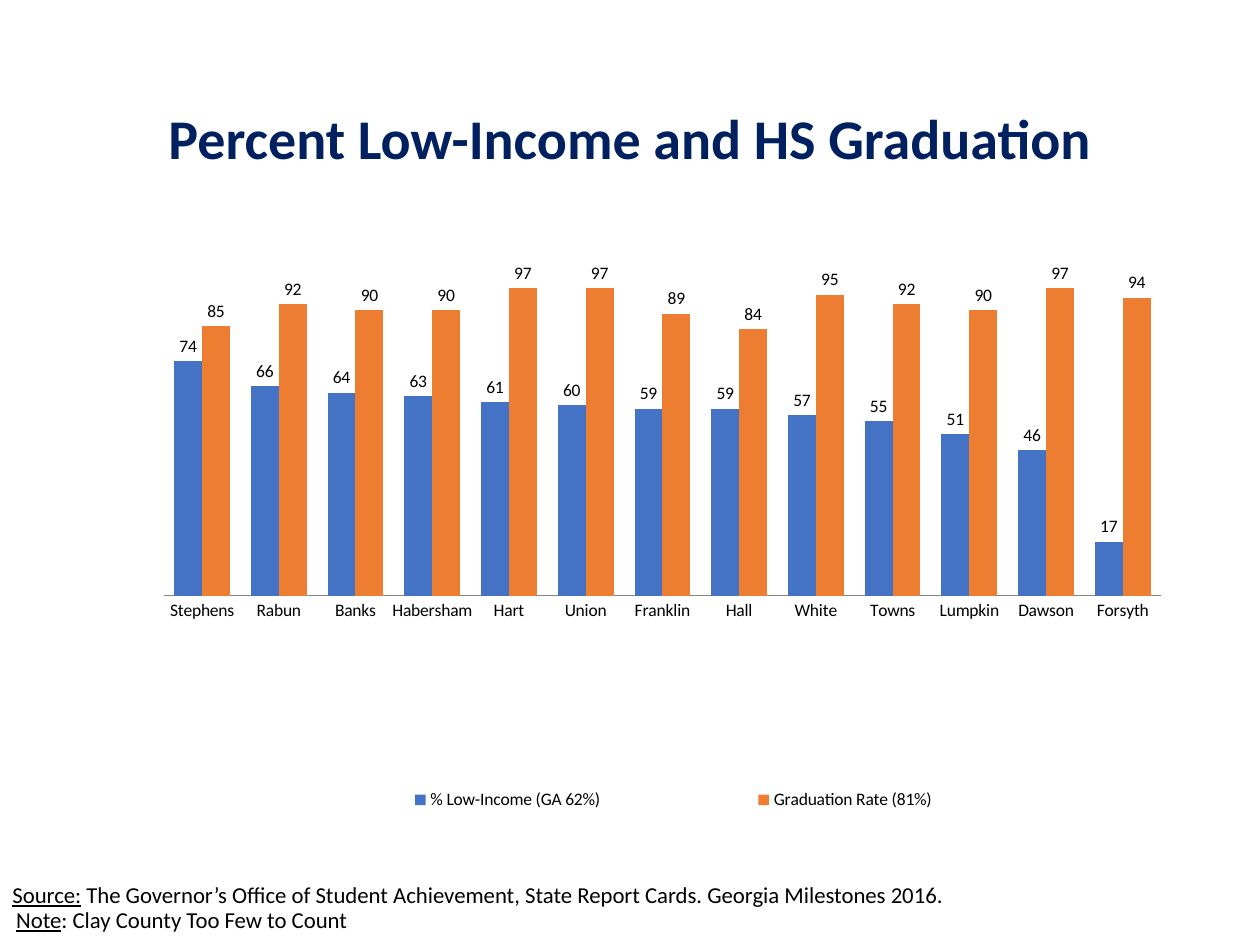
from lxml import etree
from pptx import Presentation
from pptx.chart.data import CategoryChartData
from pptx.dml.color import RGBColor
from pptx.enum.chart import XL_CHART_TYPE as ChartType
from pptx.enum.chart import XL_LABEL_POSITION as LabelPosition
from pptx.enum.chart import XL_LEGEND_POSITION as LegendPosition
from pptx.enum.chart import XL_TICK_MARK as TickMark
from pptx.enum.text import MSO_ANCHOR as Anchor
from pptx.enum.text import PP_ALIGN as Align
from pptx.oxml.ns import qn
from pptx.util import Inches, Pt

FONT = "Calibri"
COUNTIES = ["Stephens", "Rabun", "Banks", "Habersham", "Hart", "Union", "Franklin",
            "Hall", "White", "Towns", "Lumpkin", "Dawson", "Forsyth"]
SERIES = [
    ("% Low-Income (GA 62%)", "4472C4",
     [74, 66, 64, 63, 61, 60, 59, 59, 57, 55, 51, 46, 17]),
    ("Graduation Rate (81%)", "ED7D31",
     [85, 92, 90, 90, 97, 97, 89, 84, 95, 92, 90, 97, 94]),
]


def set_font(font, size, color, bold=False):
    font.name = FONT
    font.size = Pt(size)
    font.bold = bold
    font.color.rgb = RGBColor.from_string(color)


def set_title(slide, text):
    title = slide.shapes.title
    title.left, title.top = Inches(0.69), Inches(0.4)
    title.width, title.height = Inches(8.62), Inches(1.45)
    frame = title.text_frame
    frame.text = text
    frame.vertical_anchor = Anchor.MIDDLE
    paragraph = frame.paragraphs[0]
    paragraph.alignment = Align.CENTER
    paragraph.line_spacing = 0.9
    set_font(paragraph.font, 32, "002060", bold=True)


def add_footnote(slide, left, top, width, label, text):
    """Add one line of text that opens with an underlined label."""
    box = slide.shapes.add_textbox(Inches(left), Inches(top), Inches(width), Inches(0.23))
    box.text_frame.word_wrap = True
    paragraph = box.text_frame.paragraphs[0]
    paragraph.line_spacing = 0.6
    set_font(paragraph.font, 13, "000000")
    label_run = paragraph.add_run()
    label_run.text = label
    label_run.font.underline = True
    paragraph.add_run().text = text


def set_layout(element, before, x, y, w, h, inner=False):
    """Place a chart part by fractions of the chart, ahead of the child named before."""
    for old_layout in element.findall(qn("c:layout")):
        element.remove(old_layout)
    layout = etree.Element(qn("c:layout"))
    manual = etree.SubElement(layout, qn("c:manualLayout"))
    settings = [("layoutTarget", "inner")] if inner else []
    settings += [("xMode", "edge"), ("yMode", "edge"),
                 ("x", x), ("y", y), ("w", w), ("h", h)]
    for name, value in settings:
        etree.SubElement(manual, qn(f"c:{name}")).set("val", str(value))
    element.find(qn(before)).addprevious(layout)


def format_axes(chart):
    value_axis = chart.value_axis
    value_axis.minimum_scale = 0
    value_axis.maximum_scale = 120
    value_axis.has_major_gridlines = False
    value_axis.visible = False
    category_axis = chart.category_axis
    category_axis.major_tick_mark = TickMark.NONE
    category_axis.format.line.color.rgb = RGBColor.from_string("868686")
    category_axis.format.line.width = Pt(0.75)


def format_series(series, color):
    series.format.fill.solid()
    series.format.fill.fore_color.rgb = RGBColor.from_string(color)
    series.invert_if_negative = False
    labels = series.data_labels
    labels.show_value = True
    labels.number_format = "0"
    labels.number_format_is_linked = False
    labels.position = LabelPosition.OUTSIDE_END


def add_county_chart(slide):
    data = CategoryChartData()
    data.categories = COUNTIES
    for name, _, values in SERIES:
        data.add_series(name, values)
    chart = slide.shapes.add_chart(
        ChartType.COLUMN_CLUSTERED, Inches(0.69), Inches(1.43),
        Inches(8.7), Inches(5.59), data).chart
    chart.has_title = False
    set_font(chart.font, 10, "000000")
    format_axes(chart)

    plot = chart.plots[0]
    plot.gap_width = 75
    plot.overlap = 0
    plot.vary_by_categories = False
    for series, (_, color, _) in zip(plot.series, SERIES):
        format_series(series, color)
    plot_area = chart.element.find(".//" + qn("c:plotArea"))
    set_layout(plot_area, "c:barChart", 0.07, 0.05, 0.91, 0.54, inner=True)

    chart.has_legend = True
    chart.legend.position = LegendPosition.BOTTOM
    chart.legend.include_in_layout = False
    legend = chart.element.find(".//" + qn("c:legend"))
    set_layout(legend, "c:overlay", 0.16, 0.85, 0.75, 0.06)


def main():
    presentation = Presentation()
    presentation.slide_width = Inches(10)
    presentation.slide_height = Inches(7.5)
    slide = presentation.slides.add_slide(presentation.slide_layouts[5])
    set_title(slide, "Percent Low-Income and HS Graduation")
    add_footnote(slide, 0, 7.02, 8.75, "Source:",
                 " The Governor’s Office of Student Achievement, State Report Cards. "
                 "Georgia Milestones 2016.")
    add_footnote(slide, 0.03, 7.22, 8.92, "Note", ": Clay County Too Few to Count")
    add_county_chart(slide)
    presentation.save("out.pptx")


if __name__ == "__main__":
    main()
